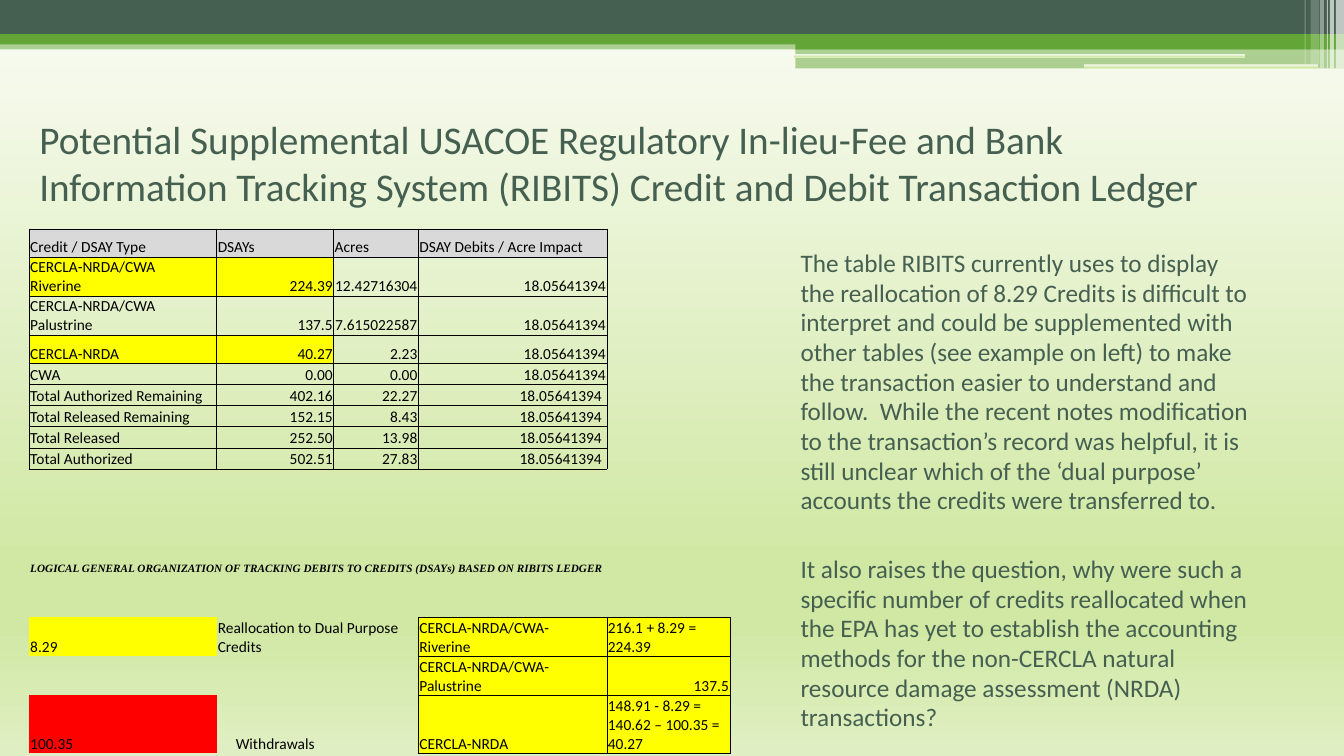
"""Build the slide on a supplemental RIBITS credit and debit ledger."""
from dataclasses import dataclass

from lxml import etree
from pptx import Presentation
from pptx import util as u
from pptx.dml.color import RGBColor
from pptx.enum import shapes, text
from pptx.oxml import ns

BLACK = RGBColor(0x00, 0x00, 0x00)
WHITE = RGBColor(0xFF, 0xFF, 0xFF)
SLATE = RGBColor(0x45, 0x5F, 0x51)
GREEN = RGBColor(0x63, 0xA5, 0x37)
GREY = RGBColor(0xD9, 0xD9, 0xD9)
YELLOW = RGBColor(0xFF, 0xFF, 0x00)
RED = RGBColor(0xFF, 0x00, 0x00)
BACKDROP = ((0, "FAFCF5"), (74, "D1E8A5"), (83, "D1E8A5"), (100, "E0EFC3"))

LEFT, CENTER, RIGHT = text.PP_ALIGN.LEFT, text.PP_ALIGN.CENTER, text.PP_ALIGN.RIGHT


@dataclass
class Bar:
    left: float
    top: float
    width: float
    height: float
    color: RGBColor | None = None
    alpha: int = 100


@dataclass
class Entry:
    words: str
    align: text.PP_ALIGN = LEFT
    fill: RGBColor | None = None
    right_margin: float = 0.01
    size: int = 11
    font: str = "Calibri"
    strong: bool = False


BARS = [
    Bar(0, 0.4, 13.33, 0.09, GREEN, 50),
    Bar(0, 0, 13.33, 0.34, SLATE),
    Bar(0, 0.34, 13.33, 0.1, GREEN),
    Bar(7.89, 0.39, 5.44, 0.1, GREEN),
    Bar(7.89, 0.48, 5.44, 0.2, GREEN, 50),
    Bar(7.88, 0.54, 4.47, 0.03),
    Bar(10.75, 0.64, 2.33, 0.04),
    Bar(13.25, 0, 0.08, 0.68, WHITE, 65),
    Bar(13.19, 0, 0.04, 0.68, WHITE, 65),
    Bar(13.16, 0, 0.01, 0.68, WHITE, 60),
    Bar(13.09, 0, 0.04, 0.68, WHITE, 40),
    Bar(13, 0, 0.08, 0.64, WHITE, 20),
    Bar(12.94, 0, 0.01, 0.64, WHITE, 30),
]
TITLE = ("Potential Supplemental USACOE Regulatory In-lieu-Fee and Bank "
         "Information Tracking System (RIBITS) Credit and Debit Transaction Ledger")
COMMENTS = [
    "The table RIBITS currently uses to display the reallocation of 8.29 Credits is "
    "difficult to interpret and could be supplemented with other tables (see example on "
    "left) to make the transaction easier to understand and follow.  While the recent "
    "notes modification to the transaction’s record was helpful, it is still unclear which "
    "of the ‘dual purpose’ accounts the credits were transferred to.",
    "It also raises the question, why were such a specific number of credits reallocated "
    "when the EPA has yet to establish the accounting methods for the non-CERCLA natural "
    "resource damage assessment (NRDA) transactions?",
]
COLUMN_WIDTHS = [1.86, 1.16, 0.84, 1.87, 1.22]
ROW_HEIGHTS = [0.28, 0.37, 0.37, 0.28] + [0.21] * 12 + [0.37, 0.37, 0.55]
HEADINGS = ["Credit / DSAY Type", "DSAYs", "Acres", "DSAY Debits / Acre Impact"]
DEBIT_RATE = "18.05641394"
CREDITS = [
    ("CERCLA-NRDA/CWA\nRiverine", "224.39", "12.42716304"),
    ("CERCLA-NRDA/CWA Palustrine", "137.5", "7.615022587"),
    ("CERCLA-NRDA", "40.27", "2.23"),
    ("CWA", "0.00", "0.00"),
    ("Total Authorized Remaining", "402.16", "22.27"),
    ("Total Released Remaining", "152.15", "8.43"),
    ("Total Released", "252.50", "13.98"),
    ("Total Authorized", "502.51", "27.83"),
]
HIGHLIGHTED_ROWS = (1, 3)
FIRST_TOTAL_ROW = 5
CAPTION_ROW = 13
TRACKING_ROW = 16


def ledger_entries() -> dict[tuple[int, int], Entry]:
    """Return the table entries by row and column."""
    entries = {(0, col): Entry(words, fill=GREY) for col, words in enumerate(HEADINGS)}
    for row, (kind, dsays, acres) in enumerate(CREDITS, 1):
        fill = YELLOW if row in HIGHLIGHTED_ROWS else None
        entries[row, 0] = Entry(kind, fill=fill)
        entries[row, 1] = Entry(dsays, RIGHT, fill)
        entries[row, 2] = Entry(acres, RIGHT)
        entries[row, 3] = Entry(DEBIT_RATE, RIGHT,
                                right_margin=0.05 if row >= FIRST_TOTAL_ROW else 0.01)
    entries[CAPTION_ROW, 0] = Entry(
        "LOGICAL GENERAL ORGANIZATION OF TRACKING DEBITS TO CREDITS (DSAYs) "
        "BASED ON RIBITS LEDGER", size=8, font="Times New Roman", strong=True)
    entries.update({
        (TRACKING_ROW, 0): Entry("8.29", fill=YELLOW),
        (TRACKING_ROW, 1): Entry("Reallocation to Dual Purpose Credits"),
        (TRACKING_ROW, 3): Entry("CERCLA-NRDA/CWA-\nRiverine", fill=YELLOW),
        (TRACKING_ROW, 4): Entry("216.1 + 8.29 = 224.39", fill=YELLOW),
        (TRACKING_ROW + 1, 3): Entry("CERCLA-NRDA/CWA- Palustrine", fill=YELLOW),
        (TRACKING_ROW + 1, 4): Entry("137.5", RIGHT, YELLOW),
        (TRACKING_ROW + 2, 0): Entry("100.35", fill=RED),
        (TRACKING_ROW + 2, 1): Entry("Withdrawals", CENTER),
        (TRACKING_ROW + 2, 3): Entry("CERCLA-NRDA", fill=YELLOW),
        (TRACKING_ROW + 2, 4): Entry("148.91 - 8.29 = 140.62 – 100.35 =\n40.27", fill=YELLOW),
    })
    return entries


def paint_backdrop(fill, element) -> None:
    """Give a fill the vertical backdrop gradient."""
    fill.gradient()
    fill.gradient_angle = 270
    stops = next(element.iter(ns.qn("a:gsLst")))
    stops.clear()
    for position, color in BACKDROP:
        stop = etree.SubElement(stops, ns.qn("a:gs"), pos=str(position * 1000))
        etree.SubElement(stop, ns.qn("a:srgbClr"), val=color)


def add_bar(slide, bar: Bar) -> None:
    """Draw one decorative bar of the banner."""
    kind = shapes.MSO_SHAPE.RECTANGLE if bar.color else shapes.MSO_SHAPE.ROUNDED_RECTANGLE
    shape = slide.shapes.add_shape(kind, *map(u.Inches, (bar.left, bar.top, bar.width, bar.height)))
    shape.shadow.inherit = False
    shape.line.fill.background()
    if bar.color is None:
        paint_backdrop(shape.fill, shape.element)
        return
    shape.fill.solid()
    shape.fill.fore_color.rgb = bar.color
    if bar.alpha < 100:
        color = next(shape.element.iter(ns.qn("a:srgbClr")))
        etree.SubElement(color, ns.qn("a:alpha"), val=str(bar.alpha * 1000))


def style_font(font, name: str, size: int, color: RGBColor) -> None:
    """Set the face, size and colour of a font."""
    font.name, font.size, font.color.rgb = name, u.Pt(size), color


def is_boxed(row: int, col: int) -> bool:
    """Tell whether a cell lies in one of the ruled blocks."""
    return (0 <= row <= len(CREDITS) and 0 <= col <= 3) or (row >= TRACKING_ROW and col in (3, 4))


def rule_cell(cell, row: int, col: int) -> None:
    """Draw the borders that a cell shares with the ruled blocks."""
    neighbours = {"lnL": (row, col - 1), "lnR": (row, col + 1),
                  "lnT": (row - 1, col), "lnB": (row + 1, col)}
    properties = cell._tc.get_or_add_tcPr()
    for index, (side, (next_row, next_col)) in enumerate(neighbours.items()):
        inside = next_row < len(ROW_HEIGHTS) and is_boxed(next_row, next_col)
        ruled = is_boxed(row, col) or inside
        line = etree.Element(ns.qn(f"a:{side}"), w=str(u.Pt(0.5)))
        paint = etree.SubElement(line, ns.qn("a:solidFill" if ruled else "a:noFill"))
        if ruled:
            etree.SubElement(paint, ns.qn("a:srgbClr"), val=str(BLACK))
        properties.insert(index, line)


def fill_cell(cell, entry: Entry) -> None:
    """Write and format one table entry."""
    cell.vertical_anchor = text.MSO_ANCHOR.BOTTOM
    cell.margin_left = cell.margin_top = u.Inches(0.01)
    cell.margin_right, cell.margin_bottom = u.Inches(entry.right_margin), 0
    if entry.fill is None:
        cell.fill.background()
    else:
        cell.fill.solid()
        cell.fill.fore_color.rgb = entry.fill
    cell.text_frame.text = entry.words
    for para in cell.text_frame.paragraphs:
        para.alignment = entry.align
        style_font(para.font, entry.font, entry.size, BLACK)
        para.font.bold = para.font.italic = entry.strong


def add_ledger(slide) -> None:
    """Add the ledger table."""
    frame = slide.shapes.add_table(len(ROW_HEIGHTS), len(COLUMN_WIDTHS), u.Inches(0.29),
                                   u.Inches(2.27), u.Inches(6.95), u.Inches(5.09))
    table = frame.table
    table.first_row = table.horz_banding = False
    for column, width in zip(table.columns, COLUMN_WIDTHS):
        column.width = u.Inches(width)
    entries = ledger_entries()
    for row, height in enumerate(ROW_HEIGHTS):
        table.rows[row].height = u.Inches(height)
        for col in range(len(COLUMN_WIDTHS)):
            cell = table.cell(row, col)
            fill_cell(cell, entries.get((row, col), Entry("")))
            rule_cell(cell, row, col)
    table.cell(CAPTION_ROW, 0).merge(table.cell(CAPTION_ROW, 4))
    table.cell(TRACKING_ROW, 1).merge(table.cell(TRACKING_ROW, 2))


def add_title(slide) -> None:
    """Place and format the title."""
    title = slide.shapes.title
    title.left, title.top, title.width, title.height = map(u.Inches, (0.29, 1.03, 12, 1.17))
    frame = title.text_frame
    frame.text = TITLE
    frame.word_wrap, frame.vertical_anchor = True, text.MSO_ANCHOR.MIDDLE
    frame.auto_size = text.MSO_AUTO_SIZE.NONE
    frame.paragraphs[0].alignment = LEFT
    style_font(frame.paragraphs[0].font, "Calibri", 28, SLATE)


def add_comments(slide) -> None:
    """Add the commentary beside the table."""
    box = slide.shapes.add_textbox(*map(u.Inches, (7.72, 2.42, 4.83, 4.75)))
    frame = box.text_frame
    frame.word_wrap, frame.margin_left = True, u.Inches(0.22)
    frame.text = "\n".join(COMMENTS)
    for para, gap in zip(frame.paragraphs, (3, 28)):
        para.space_before, para.line_spacing = u.Pt(gap), 0.98
        style_font(para.font, "Calibri", 18, SLATE)


def main() -> None:
    """Build and save the deck."""
    deck = Presentation()
    deck.slide_width, deck.slide_height = u.Inches(13.33), u.Inches(7.5)
    slide = deck.slides.add_slide(deck.slide_layouts[5])
    paint_backdrop(slide.background.fill, slide.element)
    for bar in BARS:
        add_bar(slide, bar)
    add_title(slide)
    add_ledger(slide)
    add_comments(slide)
    deck.save("out.pptx")


if __name__ == "__main__":
    main()
